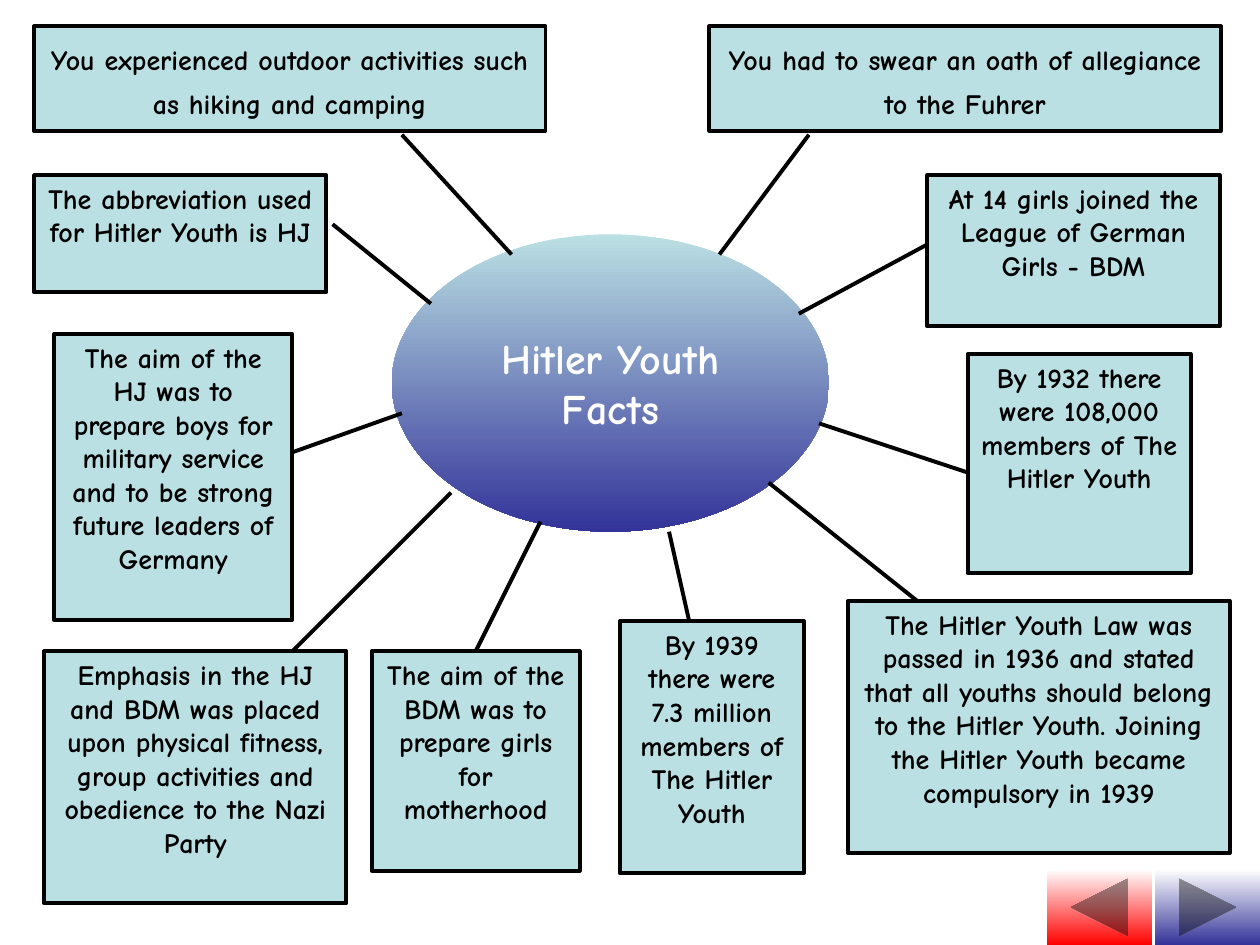
from pptx import Presentation
from pptx.dml.color import RGBColor
from pptx.enum.shapes import MSO_CONNECTOR, MSO_SHAPE
from pptx.enum.text import MSO_ANCHOR, PP_ALIGN
from pptx.oxml.ns import qn
from pptx.util import Inches, Pt
from lxml.etree import SubElement

COLOURS = {"black": "000000", "white": "FFFFFF", "pale": "BBE0E3",
           "indigo": "333399", "red": "FF0000"}
COLOURS = {name: RGBColor.from_string(code) for name, code in COLOURS.items()}
FONT = "Comic Neue"

deck = Presentation()
deck.slide_width, deck.slide_height = Inches(10), Inches(7.5)
page = deck.slides.add_slide(deck.slide_layouts[6])

# Grid of 1000 columns by 750 rows
COLUMN, ROW = deck.slide_width // 1000, deck.slide_height // 750


def add_panel(kind, left, top, width, height, fills, outlined=False):
    """Add a shape with one flat colour or a top-to-bottom gradient."""
    shape = page.shapes.add_shape(kind, left * COLUMN, top * ROW,
                                  width * COLUMN, height * ROW)
    shape.shadow.inherit = False
    if len(fills) == 1:
        shape.fill.solid()
        shape.fill.fore_color.rgb = COLOURS[fills[0]]
    else:
        shape.fill.gradient()
        shape.fill.gradient_angle = 270
        for stop, name in zip(shape.fill.gradient_stops, fills):
            stop.color.rgb = COLOURS[name]
    if outlined:
        shape.line.color.rgb = COLOURS["black"]
        shape.line.width = Pt(2.25)
    else:
        shape.line.fill.background()
    return shape


def write(shape, text, size, colour, anchor, spacing=None):
    """Set centred bold text in a shape."""
    frame = shape.text_frame
    frame.text = text
    frame.vertical_anchor = anchor
    for para in frame.paragraphs:
        para.alignment = PP_ALIGN.CENTER
        if spacing:
            para.line_spacing = spacing
        for span in para.runs:
            span.font.name = FONT
            span.font.size = Pt(size)
            span.font.bold = True
            span.font.color.rgb = COLOURS[colour]


# Central topic
topic = add_panel(MSO_SHAPE.OVAL, 311, 186, 347, 236, ["pale", "indigo"])
write(topic, "Hitler Youth\nFacts", 24, "white", MSO_ANCHOR.MIDDLE)
topic.text_frame.word_wrap = False

# Facts: box (left, top, width, height), line spacing, spoke start and end, text
facts = [
    ((27, 21, 406, 83), 1.3, (406, 202), (319, 107),
     "You experienced outdoor activities such as hiking and camping"),
    ((563, 21, 406, 83), 1.3, (571, 202), (642, 107),
     "You had to swear an oath of allegiance to the Fuhrer"),
    ((27, 139, 232, 93), None, (342, 241), (264, 178),
     "The abbreviation used for Hitler Youth is HJ"),
    ((736, 139, 232, 120), None, (634, 249), (736, 194),
     "At 14 girls joined the League of German Girls - BDM"),
    ((43, 265, 189, 227), None, (319, 328), (232, 359),
     "The aim of the HJ was to prepare boys for military service "
     "and to be strong future leaders of Germany"),
    ((768, 281, 177, 174), None, (650, 336), (768, 375),
     "By 1932 there were 108,000 members of The Hitler Youth"),
    ((35, 517, 240, 200), None, (358, 391), (232, 517),
     "Emphasis in the HJ and BDM was placed upon physical fitness, "
     "group activities and obedience to the Nazi Party"),
    ((295, 517, 165, 174), None, (429, 414), (374, 517),
     "The aim of the BDM was to prepare girls for motherhood"),
    ((492, 493, 146, 200), None, (531, 422), (547, 493),
     "By 1939 there were 7.3 million members of The Hitler Youth"),
    ((673, 477, 303, 200), None, (610, 383), (728, 477),
     "The Hitler Youth Law was passed in 1936 and stated that all youths "
     "should belong to the Hitler Youth. Joining the Hitler Youth became "
     "compulsory in 1939"),
]
for place, spacing, start, end, text in facts:
    box = add_panel(MSO_SHAPE.RECTANGLE, *place, ["pale"], outlined=True)
    write(box, text, 16, "black", MSO_ANCHOR.TOP, spacing)
    spoke = page.shapes.add_connector(
        MSO_CONNECTOR.STRAIGHT, start[0] * COLUMN, start[1] * ROW,
        end[0] * COLUMN, end[1] * ROW)
    spoke.line.color.rgb = COLOURS["black"]
    spoke.line.width = Pt(2.25)
    SubElement(spoke._element.spPr, qn("a:effectLst"))
    # Join a spoke that lands on the middle of the box's top side
    left, top, width, height = place
    if end[1] == top and abs(end[0] - left - width / 2) < 5:
        spoke.end_connect(box, 0)

# Back and forward buttons
for left, colour, mirrored in [(831, "red", True), (917, "indigo", False)]:
    button = add_panel(MSO_SHAPE.ACTION_BUTTON_FORWARD_OR_NEXT,
                       left, 690, 83, 60, ["white", colour])
    if mirrored:
        button._element.spPr.find(qn("a:xfrm")).set("flipH", "1")

deck.save("out.pptx")
